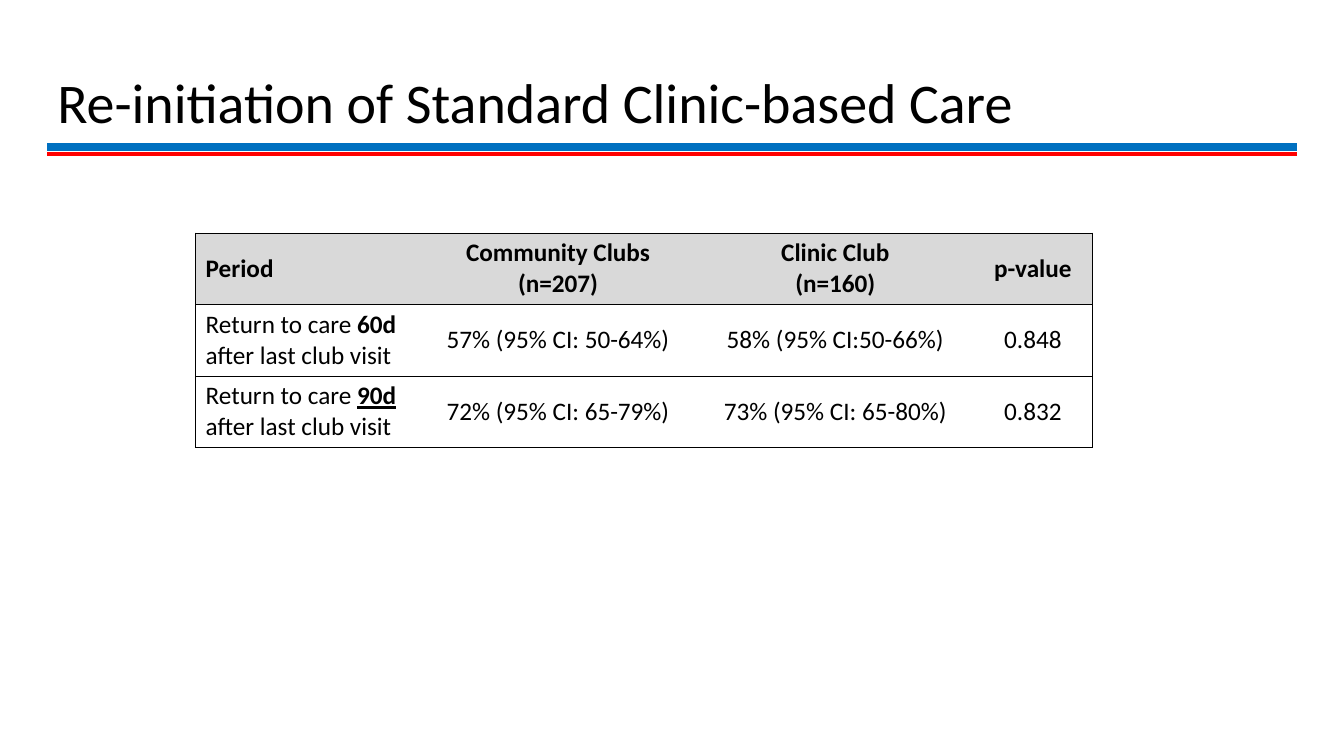
from lxml.etree import SubElement
from pptx import Presentation
from pptx.dml.color import RGBColor
from pptx.enum.shapes import MSO_CONNECTOR as Connector
from pptx.enum.text import MSO_ANCHOR as Anchor, PP_ALIGN as Align
from pptx.oxml import parse_xml
from pptx.oxml.ns import nsdecls, qn
from pptx.util import Inches, Pt

FONT = "Calibri"
BLACK = "000000"
HEADER_FILL = "D9D9D9"
COLUMN_WIDTHS = [2.22, 2.75, 2.75, 1.17]
ROW_HEIGHT = 0.71

HEADERS = [["Period"], ["Community Clubs", "(n=207)"], ["Clinic Club", "(n=160)"], ["p-value"]]
PERIODS = [
    [("Return to care ", ""), ("60d", "b"), (" after last club visit", "")],
    [("Return to care ", ""), ("90d ", "bu"), ("after last club visit", "")],
]
RESULTS = [
    ["57% (95% CI: 50-64%)", "58% (95% CI:50-66%)", "0.848"],
    ["72% (95% CI: 65-79%)", "73% (95% CI: 65-80%)", "0.832"],
]


def color(value):
    return RGBColor.from_string(value)


def add_span(para, text, size, style=""):
    span = para.add_run()
    span.text = text
    span.font.name = FONT
    span.font.size = Pt(size)
    span.font.color.rgb = color(BLACK)
    span.font.bold = "b" in style
    span.font.underline = "u" in style


def add_title(page, left, top, width, height):
    box = page.shapes.add_textbox(Inches(left), Inches(top), Inches(width), Inches(height))
    frame = box.text_frame
    frame.word_wrap = True
    frame.vertical_anchor = Anchor.MIDDLE
    para = frame.paragraphs[0]
    para.line_spacing = 0.9
    add_span(para, "Re-initiation of Standard Clinic-based Care", 40)


def add_double_rule(page, left, top, width):
    for offset, line_color, weight in [(0, "0070C0", 6), (0.07, "FF0000", 3)]:
        y = Inches(top + offset)
        rule = page.shapes.add_connector(
            Connector.STRAIGHT, Inches(left), y, Inches(left + width), y)
        rule.line.color.rgb = color(line_color)
        rule.line.width = Pt(weight)
        SubElement(rule.element.spPr, qn("a:effectLst"))


def set_borders(cell, visible):
    properties = cell._tc.get_or_add_tcPr()
    for index, side in enumerate("LRTB"):
        paint = f'<a:solidFill><a:srgbClr val="{BLACK}"/></a:solidFill>' if side in visible else "<a:noFill/>"
        border = parse_xml(f'<a:ln{side} {nsdecls("a")} w="{Pt(0.5)}">{paint}</a:ln{side}>')
        properties.insert(index, border)


def fill_cell(cell, paragraphs, align):
    cell.vertical_anchor = Anchor.MIDDLE
    frame = cell.text_frame
    for index, spans in enumerate(paragraphs):
        para = frame.add_paragraph() if index else frame.paragraphs[0]
        para.alignment = align
        for text, style in spans:
            add_span(para, text, 18, style)


def add_results_table(page, left, top):
    rows = [[[[(line, "b")] for line in lines] for lines in HEADERS]]
    for period, results in zip(PERIODS, RESULTS):
        rows.append([[period]] + [[[(result, "")]] for result in results])

    table = page.shapes.add_table(
        len(rows), len(COLUMN_WIDTHS), Inches(left), Inches(top),
        Inches(sum(COLUMN_WIDTHS)), Inches(ROW_HEIGHT * len(rows))).table
    table.horz_banding = False
    for column, width in zip(table.columns, COLUMN_WIDTHS):
        column.width = Inches(width)

    last = len(COLUMN_WIDTHS) - 1
    for row_index, row in enumerate(rows):
        table.rows[row_index].height = Inches(ROW_HEIGHT)
        for column_index, paragraphs in enumerate(row):
            cell = table.cell(row_index, column_index)
            fill_cell(cell, paragraphs, Align.CENTER if column_index else Align.LEFT)
            if row_index:
                cell.fill.background()
            else:
                cell.fill.solid()
                cell.fill.fore_color.rgb = color(HEADER_FILL)
            sides = {0: "L", last: "R"}.get(column_index, "")
            set_borders(cell, sides + "TB")


def main():
    deck = Presentation()
    deck.slide_width = Inches(13.33)
    deck.slide_height = Inches(7.5)
    page = deck.slides.add_slide(deck.slide_layouts[6])
    add_title(page, 0.47, 0.32, 13.38, 1.45)
    add_double_rule(page, 0.47, 1.46, 12.39)
    add_results_table(page, 1.94, 2.31)
    deck.save("out.pptx")


if __name__ == "__main__":
    main()
